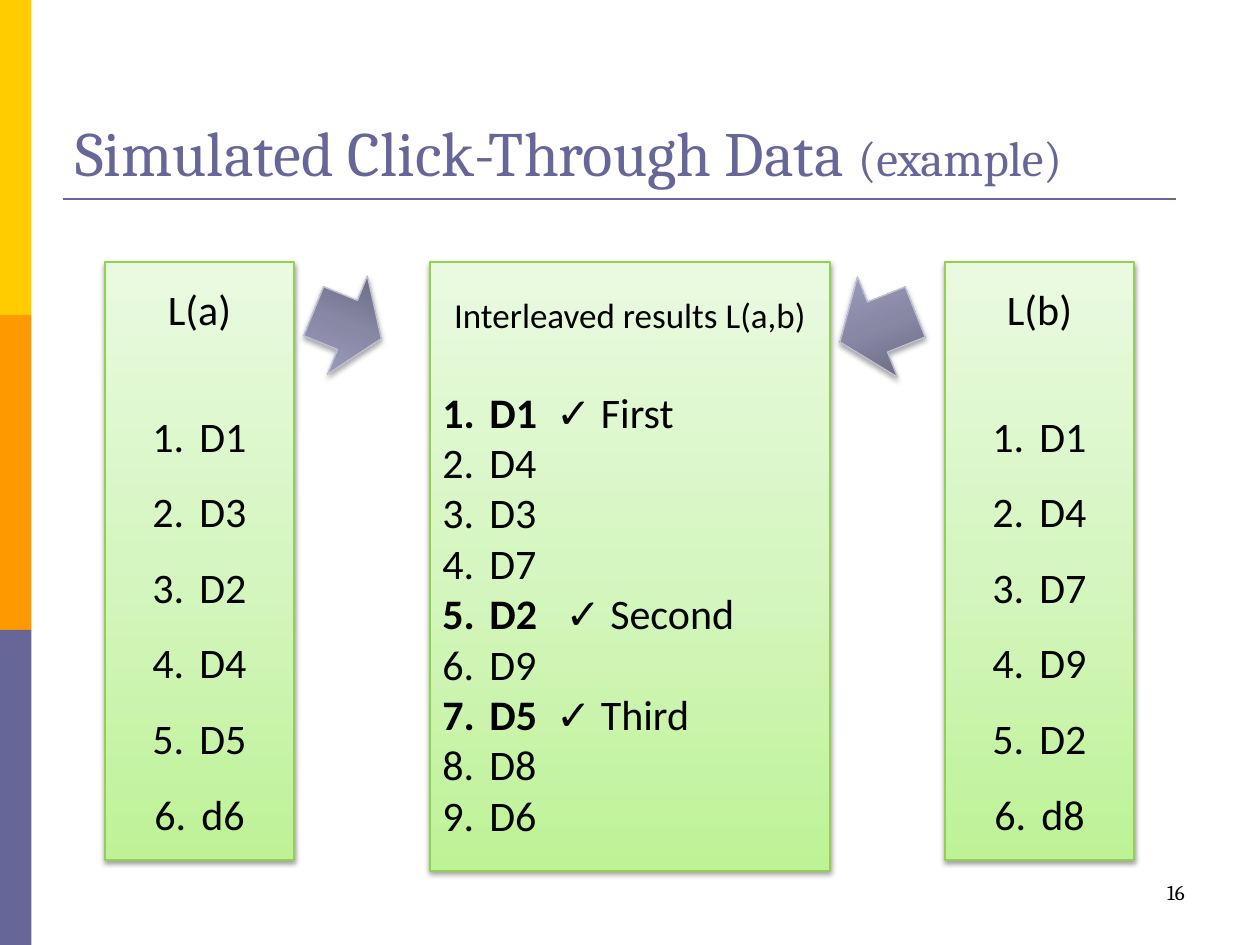
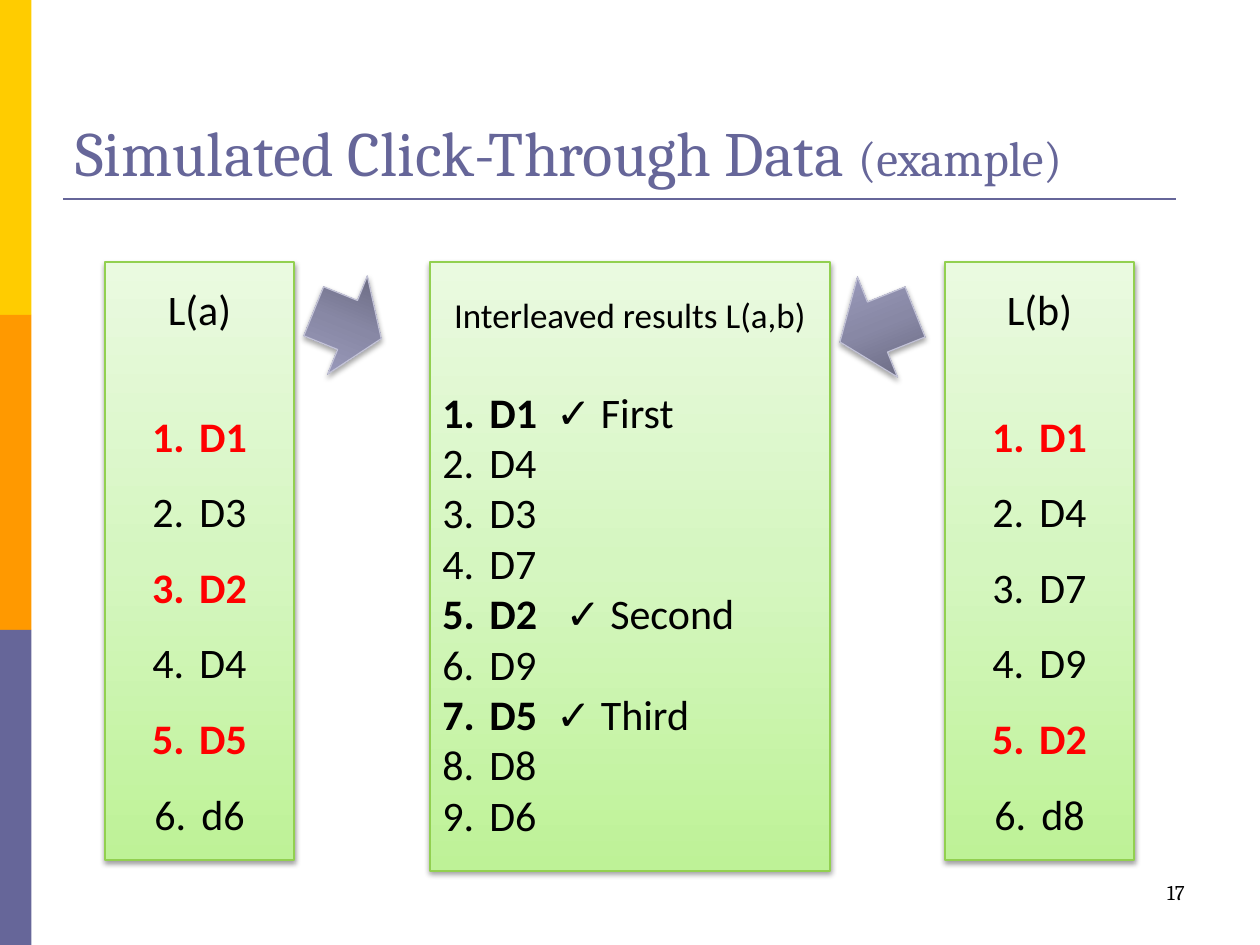
"""Two slides on simulated click-through data: two rankings merged into one."""
from lxml import etree
from pptx import Presentation
from pptx.dml.color import RGBColor
from pptx.enum.shapes import MSO_CONNECTOR, MSO_SHAPE
from pptx.enum.text import MSO_ANCHOR, PP_ALIGN
from pptx.oxml.ns import qn
from pptx.util import Pt

RECTANGLE, ARROW = MSO_SHAPE.RECTANGLE, MSO_SHAPE.RIGHT_ARROW
STRAIGHT = MSO_CONNECTOR.STRAIGHT
MIDDLE, BOTTOM = MSO_ANCHOR.MIDDLE, MSO_ANCHOR.BOTTOM
LEFT, CENTER, RIGHT = PP_ALIGN.LEFT, PP_ALIGN.CENTER, PP_ALIGN.RIGHT

EMU_PER_PX = 914400 / 126
SLIDE_WIDTH, SLIDE_HEIGHT = 1260, 945
HEADING_FONT, BODY_FONT = "Cambria", "Calibri"
COLORS = {
    "yellow": "FFCC00", "orange": "FF9900", "slate": "666699",
    "text": "000000", "hit": "FF0000",
    "panel_border": "92D050", "arrow_border": "C2C2D6",
}
PANEL_GRADIENT = ("BEF297", "D5F6C0", "EAFAE0")
ARROW_GRADIENT = ("5F5F74", "8888A5", "A1A1C4")

PANEL_TOP, LIST_WIDTH, LIST_HEIGHT = 262, 189, 598
LIST_SIZE, HEADING_GAP, NUMBER_INDENT = 24, 29, 47
SPACE_WIDTH = 542
RANKING_A = ("D1", "D3", "D2", "D4", "D5", "d6")
RANKING_B = ("D1", "D4", "D7", "D9", "D2", "d8")
INTERLEAVED = ("D1", "D4", "D3", "D7", "D2", "D9", "D5", "D8", "D6")
CLICKS = {"D1": ("First", 2), "D2": ("Second", 3), "D5": ("Third", 2)}


def px(length):
    """Turn px into EMU."""
    return round(length * EMU_PER_PX)


def rgb(name):
    """Look up a named colour."""
    return RGBColor.from_string(COLORS[name])


def add_node(parent, tag, **attributes):
    """Append a drawing element with its attributes."""
    node = etree.SubElement(parent, qn(tag))
    for key, value in attributes.items():
        node.set(key, str(value))
    return node


def add_run(paragraph, text, size, font=BODY_FONT, color="text", bold=False):
    """Add one formatted run."""
    run = paragraph.add_run()
    run.text = text
    run.font.size = Pt(size)
    run.font.name = font
    run.font.bold = bold
    run.font.color.rgb = rgb(color)
    return run


def add_text_box(slide, left, top, width, height, anchor, align):
    """Add a wrapping text box and return its first paragraph."""
    box = slide.shapes.add_textbox(px(left), px(top), px(width), px(height))
    box.text_frame.word_wrap = True
    box.text_frame.vertical_anchor = anchor
    paragraph = box.text_frame.paragraphs[0]
    paragraph.alignment = align
    return paragraph


def add_raised_shape(slide, kind, bounds, gradient, angle, border, opacity, drop):
    """Add a shape with a three-stop gradient and a soft shadow below it."""
    shape = slide.shapes.add_shape(kind, *map(px, bounds))
    properties = shape.element.spPr
    fill = add_node(properties, "a:gradFill", rotWithShape=1)
    stops = add_node(fill, "a:gsLst")
    for index, color in enumerate(gradient):
        stop = add_node(stops, "a:gs", pos=index * 50000)
        add_node(stop, "a:srgbClr", val=color)
    add_node(fill, "a:lin", ang=angle * 60000, scaled=0)
    shape.line.color.rgb = rgb(border)
    shape.line.width = Pt(0.75)
    effects = add_node(properties, "a:effectLst")
    shadow = add_node(effects, "a:outerShdw", blurRad=40000, dist=drop,
                      dir=90 * 60000, rotWithShape=0)
    shade = add_node(shadow, "a:srgbClr", val=COLORS["text"])
    add_node(shade, "a:alpha", val=opacity * 1000)
    return shape


def add_panel(slide, left, width, height, heading, heading_size):
    """Add a green panel with its heading and return its text frame."""
    panel = add_raised_shape(slide, RECTANGLE, (left, PANEL_TOP, width, height),
                             PANEL_GRADIENT, 270, "panel_border", 38, 20000)
    frame = panel.text_frame
    frame.word_wrap = True
    frame.vertical_anchor = MIDDLE
    title = frame.paragraphs[0]
    title.alignment = CENTER
    title.space_after = Pt(HEADING_GAP)
    add_run(title, heading, heading_size)
    return frame


def add_numbered(frame, align, line_spacing):
    """Add an automatically numbered paragraph."""
    paragraph = frame.add_paragraph()
    paragraph.alignment = align
    paragraph.line_spacing = line_spacing
    properties = paragraph._p.get_or_add_pPr()
    properties.set("marL", str(px(NUMBER_INDENT)))
    properties.set("indent", str(-px(NUMBER_INDENT)))
    add_node(properties, "a:buFont", typeface="+mj-lt")
    add_node(properties, "a:buAutoNum", type="arabicPeriod")
    return paragraph


def add_ranking(slide, left, heading, documents, show_hits):
    """Add one source ranking, with clicked documents in red if asked."""
    frame = add_panel(slide, left, LIST_WIDTH, LIST_HEIGHT, heading, 24)
    for document in documents:
        hit = show_hits and document in CLICKS
        add_run(add_numbered(frame, CENTER, 1.5), document, LIST_SIZE,
                color="hit" if hit else "text", bold=hit)


def add_interleaved(slide):
    """Add the merged ranking with its ticked clicks."""
    frame = add_panel(slide, 430, 400, 609, "Interleaved results L(a,b)", 20)
    for document in INTERLEAVED:
        entry = add_numbered(frame, LEFT, 1.0)
        clicked = document in CLICKS
        add_run(entry, document, LIST_SIZE, bold=clicked)
        if clicked:
            order, gap = CLICKS[document]
            spacer = add_run(entry, " ", LIST_SIZE, bold=True)
            spacer._r.get_or_add_rPr().set("spc", str(SPACE_WIDTH * (gap - 1)))
            add_run(entry, f"✓ {order}", LIST_SIZE)


def add_arrow(slide, bounds, rotation):
    """Add a block arrow pointing to the merged ranking."""
    arrow = add_raised_shape(slide, ARROW, bounds, ARROW_GRADIENT, 90,
                             "arrow_border", 35, 23000)
    arrow.rotation = rotation


def add_frame(slide, number):
    """Add the side bands, title, rule and slide number."""
    band_height = SLIDE_HEIGHT // 3
    for index, color in enumerate(("yellow", "orange", "slate")):
        band = slide.shapes.add_shape(RECTANGLE, 0, px(index * band_height),
                                      px(31.5), px(band_height))
        band.shadow.inherit = False
        band.fill.solid()
        band.fill.fore_color.rgb = rgb(color)
        band.line.fill.background()
    rule = slide.shapes.add_connector(STRAIGHT, px(63), px(199), px(1176), px(199))
    rule.line.color.rgb = rgb("slate")
    rule.line.width = Pt(1.5)
    add_node(rule.element.spPr, "a:effectLst")
    title = add_text_box(slide, 63, 38, 1134, 157, BOTTOM, LEFT)
    add_run(title, "Simulated Click-Through Data ", 36, HEADING_FONT, "slate")
    add_run(title, "(example)", 28, HEADING_FONT, "slate")
    footer = add_text_box(slide, 903, 861, 294, 63, MIDDLE, RIGHT)
    add_run(footer, str(number), 12, HEADING_FONT)


def main():
    """Build both slides and save them."""
    presentation = Presentation()
    presentation.slide_width = px(SLIDE_WIDTH)
    presentation.slide_height = px(SLIDE_HEIGHT)
    for number, show_hits in ((16, False), (17, True)):
        slide = presentation.slides.add_slide(presentation.slide_layouts[6])
        add_frame(slide, number)
        add_ranking(slide, 105, "L(a)", RANKING_A, show_hits)
        add_ranking(slide, 945, "L(b)", RANKING_B, show_hits)
        add_arrow(slide, (311, 272, 73, 106), 22)
        add_arrow(slide, (837, 273, 81, 108), 158.2)
        add_interleaved(slide)
    presentation.save("out.pptx")


if __name__ == "__main__":
    main()
